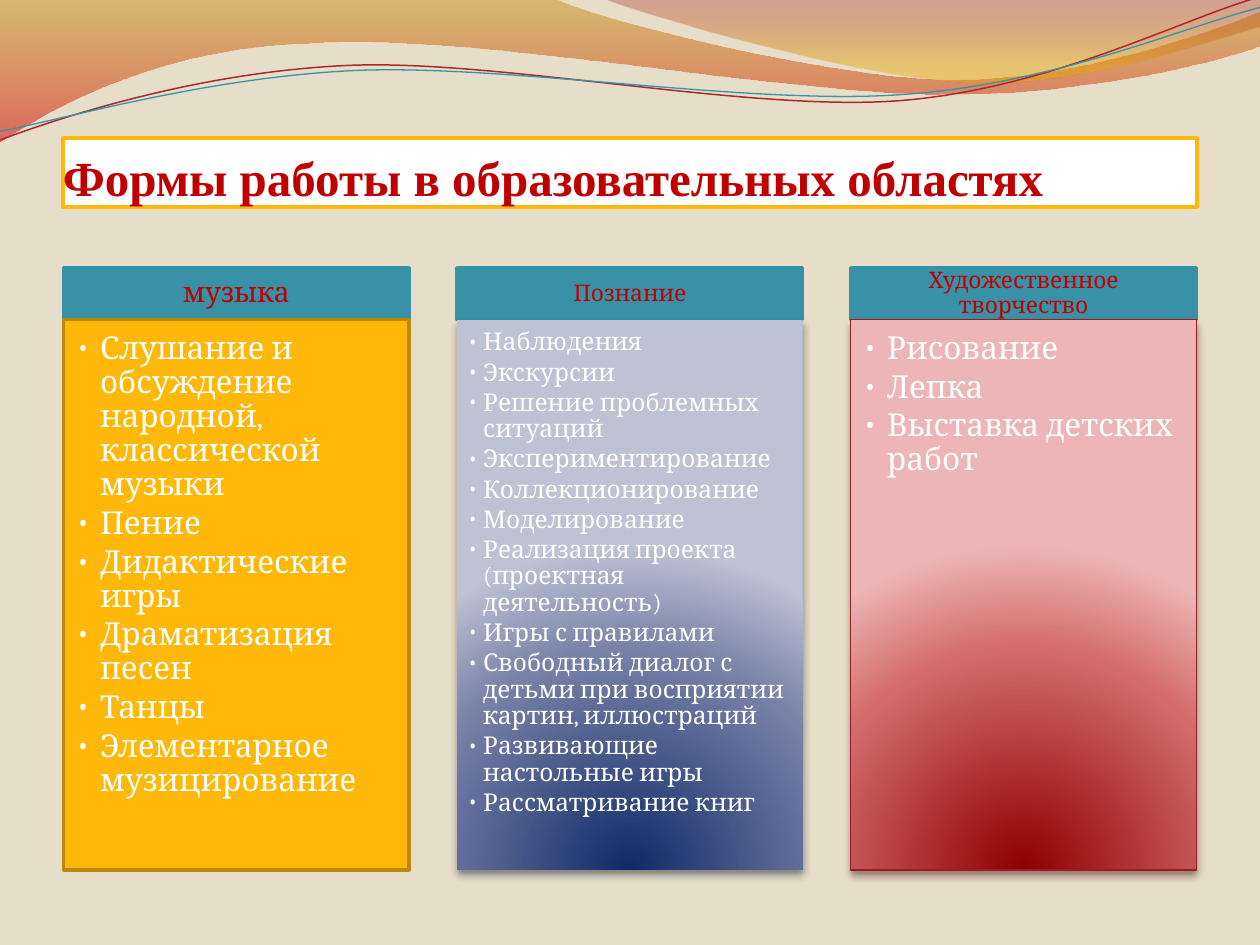
from lxml.etree import SubElement
from pptx import Presentation
from pptx.dml.color import RGBColor
from pptx.enum.shapes import MSO_SHAPE
from pptx.enum.text import MSO_ANCHOR, PP_ALIGN
from pptx.oxml import parse_xml
from pptx.oxml.ns import nsdecls, qn
from pptx.util import Pt

SAND = RGBColor(0xE7, 0xDE, 0xC9)
WHITE = RGBColor(0xFF, 0xFF, 0xFF)
RED = RGBColor(0xC0, 0x00, 0x00)
AMBER = RGBColor(0xFE, 0xB8, 0x0A)
DARK_AMBER = RGBColor(0xBC, 0x88, 0x07)
TEAL = RGBColor(0x38, 0x91, 0xA7)
WAVE_RED = RGBColor(0xAC, 0x28, 0x29)
DARK_RED = RGBColor(0x92, 0x20, 0x20)
NAVY_SHADOW = RGBColor(0x18, 0x1F, 0x32)
RED_SHADOW = RGBColor(0x46, 0x0E, 0x0F)


def stops(*parts):
    """Turn (position %, hex colour, opacity %) parts into gradient stops."""
    return [(at, RGBColor.from_string(code), opacity) for at, code, opacity in parts]


DOWNWARD = '<a:lin ang="5400000" scaled="0"/>'
FROM_BELOW = ('<a:path path="circle"><a:fillToRect l="50000" t="130000" '
              'r="50000" b="-30000"/></a:path>')

# A point of two numbers is a corner; six numbers are a Bézier segment.
BANDS = [
    ([(0, 0), (317, -0.7), (343, 12, 478, 45.4, 546, 45.4), (614, 45.4, 690, 19, 720, 6.5),
      (720.7, 26), (708, 32, 626, 54.7, 537, 54), (448, 54, 275, 20, 185, 24.5),
      (93, 26, 33, 60, -0.7, 81.4)],
     stops((0, "C38B00", 45), (100, "D60305", 55))),
    ([(345, -0.7), (366, 8, 491, 44.6, 554, 46.8), (616, 49.7, 692, 23, 720, 15), (720, 0)],
     stops((0, "A11112", 30), (80, "E9A600", 45))),
]
WAVES = [
    ([(0, 80), (34.6, 67, 113.8, 41, 199.4, 37.4), (284.4, 33.8, 427, 64, 513.4, 57.6),
      (599.8, 51, 675.4, 10.8, 718.6, -1.4)], WAVE_RED, 0.85),
    ([(0, 75), (33.8, 69, 118, 44, 203.8, 40.3), (290, 36.7, 429.8, 60.5, 516.2, 54),
      (602, 48.2, 677.5, 15, 720, 4.3)], TEAL, 0.75),
]

TITLE = "Формы работы в образовательных областях"
COLUMNS = [
    dict(heading="музыка", heading_size=16, size=18, indent=13.7, insets=(7.2, 7.2, 10, 11.5),
         items=["Слушание и обсуждение народной, классической музыки", "Пение",
                "Дидактические игры", "Драматизация песен", "Танцы",
                "Элементарное музицирование"],
         fill=AMBER, line=DARK_AMBER, line_width=2, shadow=None),
    dict(heading="Познание", heading_size=13, size=14, indent=9, insets=(5.8, 5.8, 8, 8.6),
         items=["Наблюдения", "Экскурсии", "Решение проблемных ситуаций",
                "Экспериментирование", "Коллекционирование", "Моделирование",
                "Реализация проекта (проектная деятельность)", "Игры с правилами",
                "Свободный диалог с детьми при восприятии картин, иллюстраций",
                "Развивающие настольные игры", "Рассматривание книг"],
         fill=stops((0, "122969", 100), (68, "7782A7", 100), (100, "BDC2D4", 100)),
         line=None, line_width=0, shadow=NAVY_SHADOW),
    dict(heading="Художественное творчество", heading_size=13, size=18, indent=13.7,
         insets=(7.2, 7.2, 10, 11.5),
         items=["Рисование", "Лепка", "Выставка детских работ"],
         fill=stops((0, "8D0001", 100), (68, "D46B6B", 100), (100, "EDB5B5", 100)),
         line=DARK_RED, line_width=0.75, shadow=RED_SHADOW),
]

MARGIN, CONTENT_WIDTH = 36, 648
COLUMNS_LEFT, COLUMN_WIDTH, COLUMN_STEP = 36.4, 197.4, 224.9
HEADING_TOP, HEADING_HEIGHT, BODY_HEIGHT = 153, 29.6, 314.5


def set_gradient(shape, gradient, direction):
    shape.fill.gradient()
    marks = "".join(
        f'<a:gs pos="{at * 1000}"><a:srgbClr val="{color}">'
        f'<a:alpha val="{opacity * 1000}"/></a:srgbClr></a:gs>'
        for at, color, opacity in gradient)
    properties = shape.element.spPr
    properties.replace(properties.find(qn("a:gradFill")), parse_xml(
        f'<a:gradFill {nsdecls("a")} rotWithShape="1"><a:gsLst>{marks}</a:gsLst>'
        f'{direction}</a:gradFill>'))


def set_line(shape, color, width):
    if color is None:
        shape.line.fill.background()
    else:
        shape.line.color.rgb = color
        shape.line.width = Pt(width)


def add_curve(slide, outline, close):
    """Build the outline through its end points, then bend the Bézier segments."""
    start, *ends = [(Pt(part[-2]), Pt(part[-1])) for part in outline]
    builder = slide.shapes.build_freeform(*start)
    builder.add_line_segments(ends, close=close)
    curve = builder.convert_to_shape()
    curve.shadow.inherit = False
    segments = list(curve.element.spPr.iter(qn("a:lnTo")))
    for segment, part in zip(segments, outline[1:]):
        if len(part) == 6:
            bend = SubElement(segment.getparent(), qn("a:cubicBezTo"))
            for x, y in zip(part[::2], part[1::2]):
                SubElement(bend, qn("a:pt"), x=str(Pt(x) - curve.left), y=str(Pt(y) - curve.top))
            segment.getparent().replace(segment, bend)
    return curve


def add_panel(slide, box, fill, line, line_width, shadow=None):
    panel = slide.shapes.add_shape(MSO_SHAPE.RECTANGLE, *map(Pt, box))
    if isinstance(fill, list):
        set_gradient(panel, fill, FROM_BELOW)
    else:
        panel.fill.solid()
        panel.fill.fore_color.rgb = fill
    set_line(panel, line, line_width)
    panel.shadow.inherit = False
    if shadow is not None:
        panel.element.spPr.find(qn("a:effectLst")).append(parse_xml(
            f'<a:outerShdw {nsdecls("a")} blurRad="{Pt(4.5)}" dist="{Pt(3)}" dir="5400000" '
            f'rotWithShape="0"><a:srgbClr val="{shadow}"><a:alpha val="48000"/></a:srgbClr>'
            f'</a:outerShdw>'))
    return panel


def write(panel, lines, font, size, color, insets, anchor, align=PP_ALIGN.LEFT,
          spacing=0.9, bold=False, indent=None):
    frame = panel.text_frame
    frame.word_wrap = True
    frame.vertical_anchor = anchor
    (frame.margin_left, frame.margin_top,
     frame.margin_right, frame.margin_bottom) = map(Pt, insets)
    frame.text = "\n".join(lines)
    for paragraph in frame.paragraphs:
        paragraph.alignment = align
        paragraph.line_spacing = spacing
        if indent:
            paragraph.space_after = Pt(size * 0.15)
            properties = paragraph._p.get_or_add_pPr()
            properties.set("marL", str(Pt(indent)))
            properties.set("indent", str(Pt(-indent)))
            SubElement(properties, qn("a:buFont"), typeface=font)
            SubElement(properties, qn("a:buChar"), char="•")
        for run in paragraph.runs:
            run.font.name = font
            run.font.size = Pt(size)
            run.font.bold = bold
            run.font.color.rgb = color


def main():
    deck = Presentation()
    deck.slide_width, deck.slide_height = Pt(720), Pt(540)
    slide = deck.slides.add_slide(deck.slide_layouts[6])
    slide.background.fill.solid()
    slide.background.fill.fore_color.rgb = SAND

    for outline, gradient in BANDS:
        band = add_curve(slide, outline, close=True)
        set_gradient(band, gradient, DOWNWARD)
        set_line(band, None, 0)
    for outline, color, width in WAVES:
        wave = add_curve(slide, outline, close=False)
        wave.fill.background()
        set_line(wave, color, width)

    title = add_panel(slide, (MARGIN, 78.8, CONTENT_WIDTH, 39.4), WHITE, AMBER, 2)
    write(title, [TITLE], "Times New Roman", 28, RED, (0, 3.6, 0, 0),
          MSO_ANCHOR.BOTTOM, spacing=1.0, bold=True)

    for index, column in enumerate(COLUMNS):
        left = COLUMNS_LEFT + index * COLUMN_STEP
        heading = add_panel(slide, (left, HEADING_TOP, COLUMN_WIDTH, HEADING_HEIGHT),
                            TEAL, TEAL, 2)
        write(heading, [column["heading"]], "Cambria", column["heading_size"], RED,
              (7.2, 4.3, 7.2, 4.3), MSO_ANCHOR.MIDDLE, PP_ALIGN.CENTER)
        body = add_panel(slide, (left, HEADING_TOP + HEADING_HEIGHT, COLUMN_WIDTH, BODY_HEIGHT),
                         column["fill"], column["line"], column["line_width"], column["shadow"])
        write(body, column["items"], "Cambria", column["size"], WHITE, column["insets"],
              MSO_ANCHOR.TOP, indent=column["indent"])

    deck.save("out.pptx")


if __name__ == "__main__":
    main()
